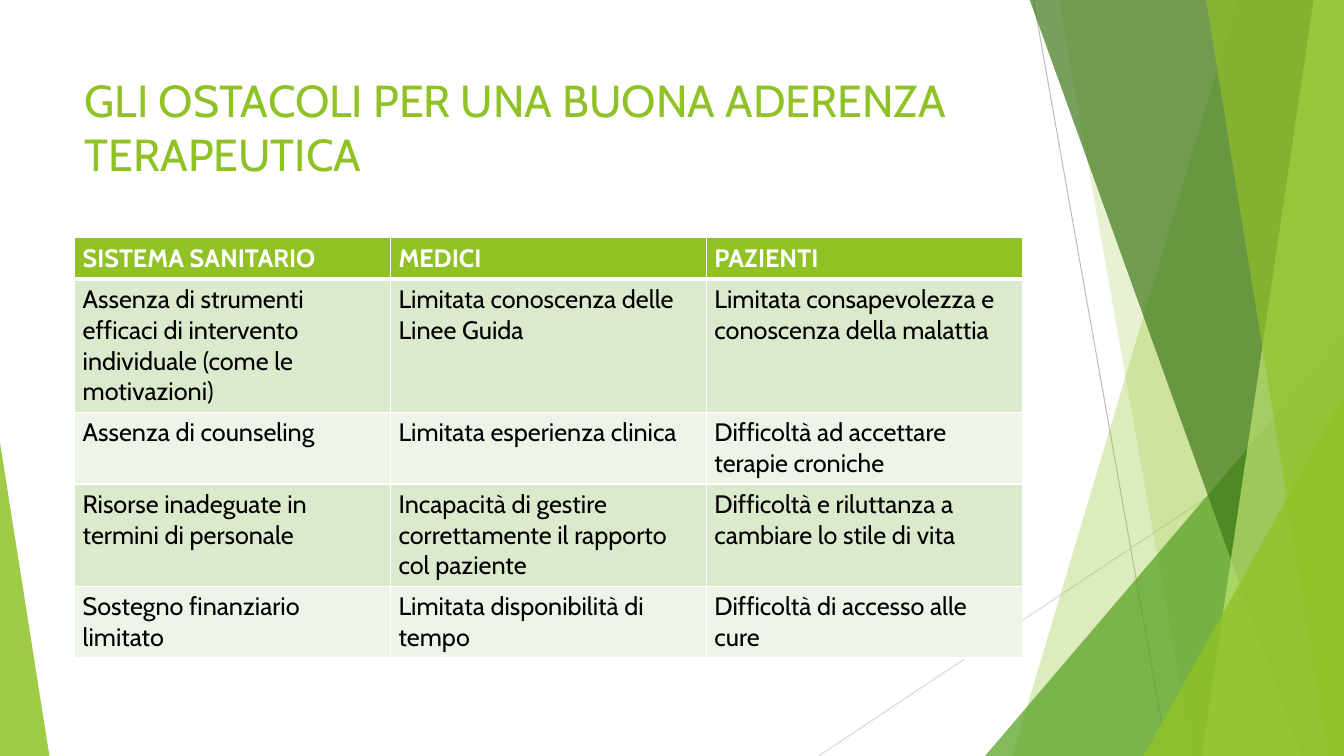
from lxml import etree
from pptx import Presentation
from pptx.dml.color import RGBColor
from pptx.enum.shapes import MSO_CONNECTOR, MSO_SHAPE
from pptx.enum.text import MSO_ANCHOR, PP_ALIGN
from pptx.oxml.ns import qn
from pptx.util import Inches, Pt

STRAIGHT = MSO_CONNECTOR.STRAIGHT
TRIANGLE = MSO_SHAPE.ISOSCELES_TRIANGLE
TOP_ANCHOR = MSO_ANCHOR.TOP
LEFT_ALIGN = PP_ALIGN.LEFT

LIME = RGBColor(0x90, 0xC2, 0x26)
GREEN = RGBColor(0x54, 0xA0, 0x21)
DARK_GREEN = RGBColor(0x3F, 0x78, 0x19)
PALE_LIME = RGBColor(0xC0, 0xE4, 0x74)
GRAY = RGBColor(0xBF, 0xBF, 0xBF)
LIGHT_GRAY = RGBColor(0xD9, 0xD9, 0xD9)
BAND_DARK = RGBColor(0xDB, 0xE9, 0xCD)
BAND_LIGHT = RGBColor(0xEE, 0xF4, 0xE8)
WHITE = RGBColor(0xFF, 0xFF, 0xFF)
BLACK = RGBColor(0x00, 0x00, 0x00)

FONT = "Cabin"
W, H = 13.33, 7.5
TOP = -0.01
LEFT, CONTENT_W = 0.74, 9.4


def paint(sp, color, opacity):
    sp.shadow.inherit = False
    sp.fill.solid()
    sp.fill.fore_color.rgb = color
    sp.line.fill.background()
    clr = sp.fill._xPr.find(qn("a:solidFill"))[0]
    etree.SubElement(clr, qn("a:alpha")).set("val", str(opacity * 1000))


def add_text(p, text, size, color, bold=False):
    p.alignment = LEFT_ALIGN
    r = p.add_run()
    r.text = text
    r.font.name = FONT
    r.font.size = Pt(size)
    r.font.bold = bold
    r.font.color.rgb = color


prs = Presentation()
prs.slide_width, prs.slide_height = Inches(W), Inches(H)
s = prs.slides.add_slide(prs.slide_layouts[5])

for x1, y1, x2, y2, color in [
    (10.25, 0, 11.58, H, GRAY),
    (W, 4.03, 8.12, H, LIGHT_GRAY),
]:
    line = s.shapes.add_connector(STRAIGHT, Inches(x1), Inches(y1), Inches(x2), Inches(y2))
    line.line.color.rgb = color
    line.line.width = Pt(0.75)
    etree.SubElement(line._element.spPr, qn("a:effectLst"))

bands = [
    (12.28, 10.04, LIME, 30),
    (10.5, 11.83, LIME, 20),
    (9.77, 3.33, 3.56, 1, GREEN, 72),
    (10.21, 12.91, DARK_GREEN, 70),
    (13.03, 11.92, PALE_LIME, 70),
    (11.96, 13.18, LIME, 65),
    (11.34, 3.93, 1.99, 1, LIME, 80),
    (0, 4.39, 0.49, 0, LIME, 85),
]
for *geometry, color, opacity in bands:
    if len(geometry) == 2:
        top_x, bottom_x = geometry
        fb = s.shapes.build_freeform(Inches(top_x), Inches(TOP))
        corners = [(W, TOP), (W, H), (bottom_x, H)]
        fb.add_line_segments([(Inches(x), Inches(y)) for x, y in corners])
        sp = fb.convert_to_shape()
    else:
        x, y, width, apex = geometry
        sp = s.shapes.add_shape(TRIANGLE, Inches(x), Inches(y), Inches(width), Inches(H - y))
        sp.adjustments[0] = apex
    paint(sp, color, opacity)

title = s.shapes.title
title.left, title.top = Inches(LEFT), Inches(0.67)
title.width, title.height = Inches(CONTENT_W), Inches(1.44)
tf = title.text_frame
tf.word_wrap = True
tf.vertical_anchor = TOP_ANCHOR
add_text(tf.paragraphs[0], "GLI OSTACOLI PER UNA BUONA ADERENZA TERAPEUTICA", 32, LIME)

rows = [
    ("SISTEMA SANITARIO", "MEDICI", "PAZIENTI"),
    ("Assenza di strumenti efficaci di intervento individuale (come le motivazioni)",
     "Limitata conoscenza delle Linee Guida",
     "Limitata consapevolezza e conoscenza della malattia"),
    ("Assenza di counseling", "Limitata esperienza clinica",
     "Difficoltà ad accettare terapie croniche"),
    ("Risorse inadeguate in termini di personale",
     "Incapacità di gestire correttamente il rapporto col paziente",
     "Difficoltà e riluttanza a cambiare lo stile di vita"),
    ("Sostegno finanziario limitato", "Limitata disponibilità di tempo",
     "Difficoltà di accesso alle cure"),
]
row_heights = [0.41, 1.32, 0.71, 1.01, 0.71]
table = s.shapes.add_table(len(rows), 3, Inches(LEFT), Inches(2.36),
                           Inches(CONTENT_W), Inches(sum(row_heights))).table
for col in table.columns:
    col.width = Inches(CONTENT_W / 3)

for i, texts in enumerate(rows):
    table.rows[i].height = Inches(row_heights[i])
    header = i == 0
    for j, text in enumerate(texts):
        cell = table.cell(i, j)
        cell.margin_left = cell.margin_right = Inches(0.08)
        cell.margin_top = cell.margin_bottom = Inches(0.05)
        tcPr = cell._tc.get_or_add_tcPr()
        for side in "LRTB":
            thick = (header and side == "B") or (i == 1 and side == "T")
            ln = etree.SubElement(tcPr, qn(f"a:ln{side}"), w=str(Pt(3 if thick else 1)))
            fill = etree.SubElement(ln, qn("a:solidFill"))
            etree.SubElement(fill, qn("a:srgbClr"), val=str(WHITE))
        cell.fill.solid()
        cell.fill.fore_color.rgb = LIME if header else BAND_DARK if i % 2 else BAND_LIGHT
        add_text(cell.text_frame.paragraphs[0], text, 18, WHITE if header else BLACK, header)

prs.save("out.pptx")
